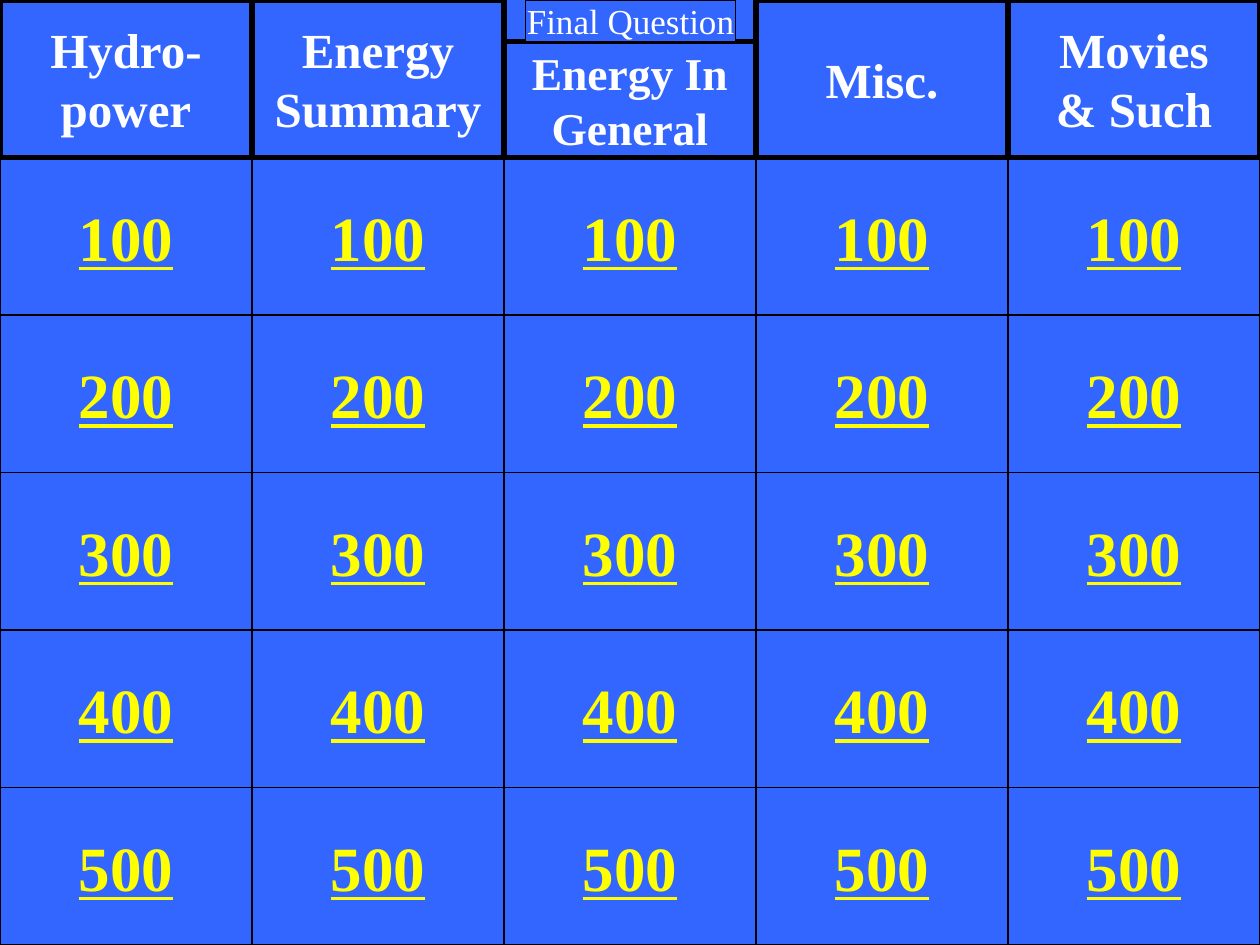
from pptx import Presentation
from pptx.dml.color import RGBColor
from pptx.enum.shapes import MSO_SHAPE as Shape
from pptx.enum.text import MSO_ANCHOR as Anchor, PP_ALIGN as Align
from pptx.util import Inches, Pt

COLORS = {"board": "3366FF", "border": "000000", "heading": "FFFFFF", "points": "FFFF00"}
FONT = "Times New Roman"
COLUMN_WIDTH, ROW_HEIGHT = 2, 1.25
FINAL_HEIGHT = 0.33
CATEGORIES = [
    ["Hydro-", "power"],
    ["Energy", "Summary"],
    ["Energy In", "General"],
    ["Misc."],
    ["Movies", "& Such"],
]
SHORT_CATEGORY = 2
POINTS = [100, 200, 300, 400, 500]


def color(name):
    """Return the named palette colour."""
    return RGBColor.from_string(COLORS[name])


def add_tile(slide, preset, box, lines, size, ink, border, bold=True, underline=False):
    """Add one bordered board tile with centred lines of text."""
    tile = slide.shapes.add_shape(preset, *(Inches(length) for length in box))
    tile.shadow.inherit = False
    tile.fill.solid()
    tile.fill.fore_color.rgb = color("board")
    tile.line.color.rgb = color("border")
    tile.line.width = Pt(border)
    frame = tile.text_frame
    frame.word_wrap = False
    frame.vertical_anchor = Anchor.MIDDLE
    frame.text = "\n".join(lines)
    for paragraph in frame.paragraphs:
        paragraph.alignment = Align.CENTER
        font = paragraph.font
        font.name, font.size = FONT, Pt(size)
        font.bold, font.underline = bold, underline
        font.color.rgb = color(ink)


def add_points(slide, column, row, points):
    """Add the button for one point value."""
    box = (column * COLUMN_WIDTH, row * ROW_HEIGHT, COLUMN_WIDTH, ROW_HEIGHT)
    add_tile(slide, Shape.ACTION_BUTTON_CUSTOM, box, [str(points)], 36, "points", 0.75,
             underline=True)


def add_category(slide, column, lines):
    """Add a category heading, shortened above the middle column."""
    top, size = (FINAL_HEIGHT, 26) if column == SHORT_CATEGORY else (0, 28)
    box = (column * COLUMN_WIDTH, top, COLUMN_WIDTH, ROW_HEIGHT - top)
    add_tile(slide, Shape.RECTANGLE, box, lines, size, "heading", 3)


def add_final_button(slide):
    """Add the button for the final round."""
    add_tile(slide, Shape.ACTION_BUTTON_CUSTOM, (4.17, 0, 1.67, FINAL_HEIGHT),
             ["Final Question"], 20, "heading", 0.75, bold=False)


def main():
    """Build the quiz board and save it."""
    deck = Presentation()
    deck.slide_width, deck.slide_height = Inches(10), Inches(7.5)
    slide = deck.slides.add_slide(deck.slide_layouts[6])
    slide.background.fill.solid()
    slide.background.fill.fore_color.rgb = color("board")
    for column in range(len(CATEGORIES)):
        for row, points in enumerate(POINTS, start=1):
            add_points(slide, column, row, points)
    for column, lines in enumerate(CATEGORIES):
        add_category(slide, column, lines)
    add_final_button(slide)
    deck.save("out.pptx")


if __name__ == "__main__":
    main()
